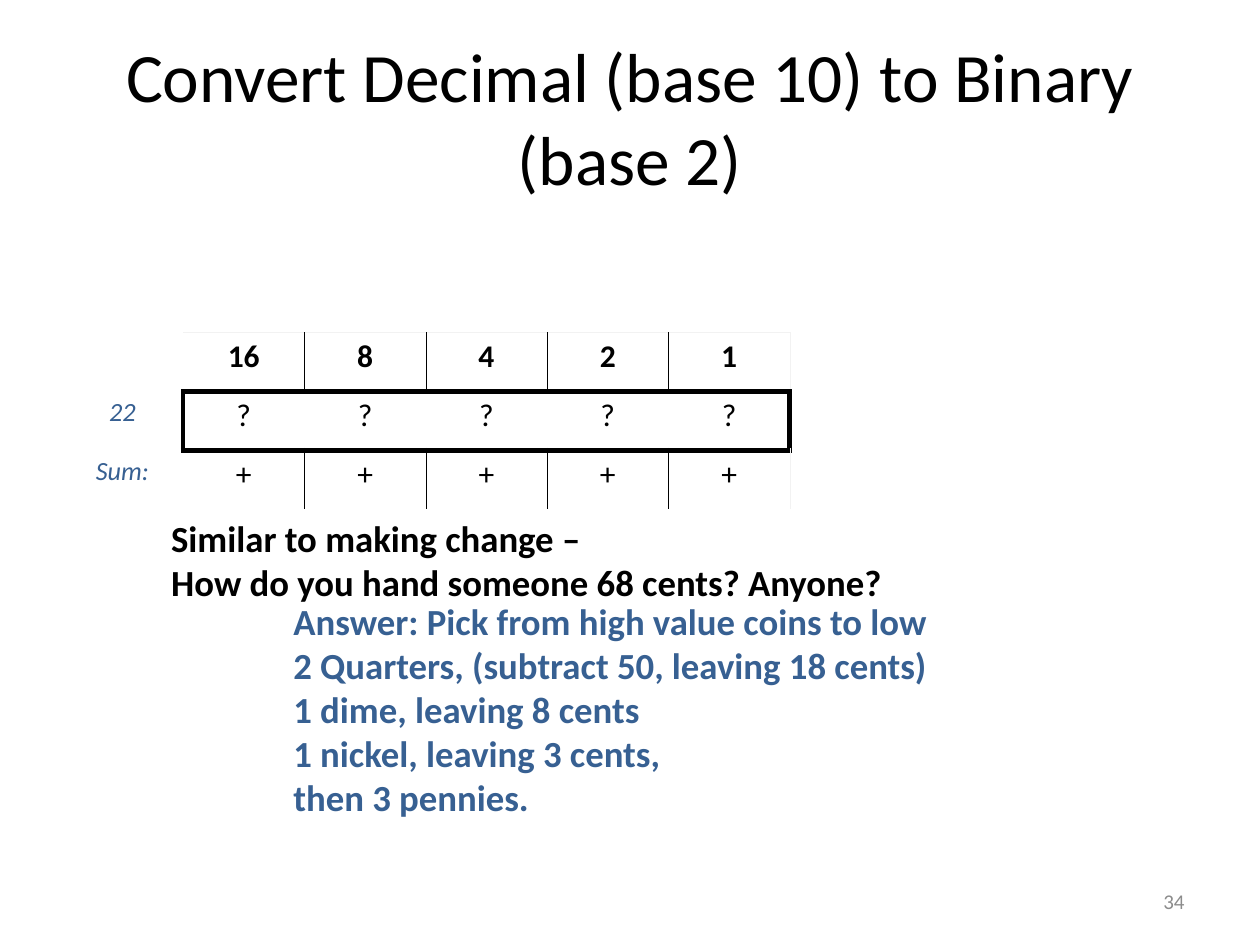
"""Build the slide on converting decimal numbers to binary."""
from pptx import Presentation
from pptx.dml.color import RGBColor
from pptx.enum.text import MSO_ANCHOR as Anchor, PP_ALIGN as Align
from pptx.oxml.ns import qn
from pptx.util import Inches, Pt
from lxml.etree import SubElement

BLACK = RGBColor(0x00, 0x00, 0x00)
WHITE = RGBColor(0xFF, 0xFF, 0xFF)
BLUE = RGBColor(0x37, 0x60, 0x92)
GRAY = RGBColor(0x8C, 0x8C, 0x8C)
PALE = RGBColor(0xF2, 0xF2, 0xF2)

TITLE_FONT = dict(size=Pt(39.6), color=BLACK)
QUESTION_FONT = dict(size=Pt(21), color=BLACK, bold=True)
ANSWER_FONT = dict(size=Pt(21), color=BLUE, bold=True)
NUMBER_FONT = dict(size=Pt(12), color=GRAY)
PLACE_FONT = dict(size=Pt(18), color=BLACK, bold=True)
DIGIT_FONT = dict(size=Pt(18), color=BLACK, bold=False)
LABEL_FONT = dict(size=Pt(15), color=BLUE, bold=False, italic=True)

TEXTS = [
    (["Convert Decimal (base 10) to Binary (base 2)"],
     (0.5, 0.3, 9, 1.25), TITLE_FONT, Align.CENTER, Anchor.MIDDLE),
    (["Similar to making change –", "How do you hand someone 68 cents? Anyone?"],
     (1.26, 4.04, 6.31, 0.81), QUESTION_FONT, Align.LEFT, Anchor.TOP),
    (["Answer: Pick from high value coins to low",
      "2 Quarters, (subtract 50, leaving 18 cents)",
      "1 dime, leaving 8 cents",
      "1 nickel, leaving 3 cents,",
      "then 3 pennies."],
     (2.23, 4.7, 6.31, 1.87), ANSWER_FONT, Align.LEFT, Anchor.TOP),
    (["34"], (7.17, 6.95, 2.33, 0.4), NUMBER_FONT, Align.RIGHT, Anchor.MIDDLE),
]
PLACE_VALUES = [
    ["", "16", "8", "4", "2", "1"],
    ["22", "?", "?", "?", "?", "?"],
    ["Sum:", "+", "+", "+", "+", "+"],
]
TABLE_AT = (0.49, 2.64, 5.78, 1.4)
MARGINS = dict(margin_left=Inches(0.07), margin_right=Inches(0.07),
               margin_top=Inches(0.04), margin_bottom=Inches(0.04))
THICK, THIN, FAINT, CLEAR = (BLACK, 3), (BLACK, 0.25), (PALE, 0.25), (WHITE, 0.25)
ROW_EDGES = [FAINT, THICK, THICK, CLEAR]
OUTER_COLUMN_EDGES = [None, None, THIN, THIN, THIN, THIN, FAINT]
DIGIT_COLUMN_EDGES = [None, THICK, None, None, None, None, THICK]
COLUMN_EDGES = [OUTER_COLUMN_EDGES, DIGIT_COLUMN_EDGES, OUTER_COLUMN_EDGES]


def write(paragraph, words, font, align):
    paragraph.alignment = align
    run = paragraph.add_run()
    run.text = words
    run.font.name = "Calibri"
    for key, value in font.items():
        if key == "color":
            run.font.color.rgb = value
        else:
            setattr(run.font, key, value)


def add_text(slide, lines, at, font, align, anchor):
    frame = slide.shapes.add_textbox(*map(Inches, at)).text_frame
    frame.word_wrap = True
    frame.vertical_anchor = anchor
    for index, words in enumerate(lines):
        paragraph = frame.add_paragraph() if index else frame.paragraphs[0]
        write(paragraph, words, font, align)


def draw_edge(cell, side, edge):
    properties = cell._tc.get_or_add_tcPr()
    if edge is None:
        line = SubElement(properties, qn(f"a:ln{side}"), w="0")
        SubElement(line, qn("a:noFill"))
        return
    color, width = edge
    line = SubElement(properties, qn(f"a:ln{side}"), w=str(Pt(width)))
    fill = SubElement(line, qn("a:solidFill"))
    SubElement(fill, qn("a:srgbClr"), val=str(color))


def add_place_values(slide):
    shape = slide.shapes.add_table(len(PLACE_VALUES), len(PLACE_VALUES[0]),
                                   *map(Inches, TABLE_AT))
    table = shape.table
    table.first_row = table.horz_banding = False
    for r, row in enumerate(PLACE_VALUES):
        for c, words in enumerate(row):
            cell = table.cell(r, c)
            for key, value in MARGINS.items():
                setattr(cell, key, value)
            edges = dict(L=COLUMN_EDGES[r][c], R=COLUMN_EDGES[r][c + 1],
                         T=ROW_EDGES[r] if c else None,
                         B=ROW_EDGES[r + 1] if c else None)
            for side, edge in edges.items():
                draw_edge(cell, side, edge)
            cell.fill.background()
            if words:
                font = LABEL_FONT if c == 0 else DIGIT_FONT if r else PLACE_FONT
                write(cell.text_frame.paragraphs[0], words, font, Align.CENTER)


def main():
    deck = Presentation()
    deck.slide_width, deck.slide_height = Inches(10), Inches(7.5)
    slide = deck.slides.add_slide(deck.slide_layouts[6])
    add_place_values(slide)
    for text in TEXTS:
        add_text(slide, *text)
    deck.save("out.pptx")


if __name__ == "__main__":
    main()
